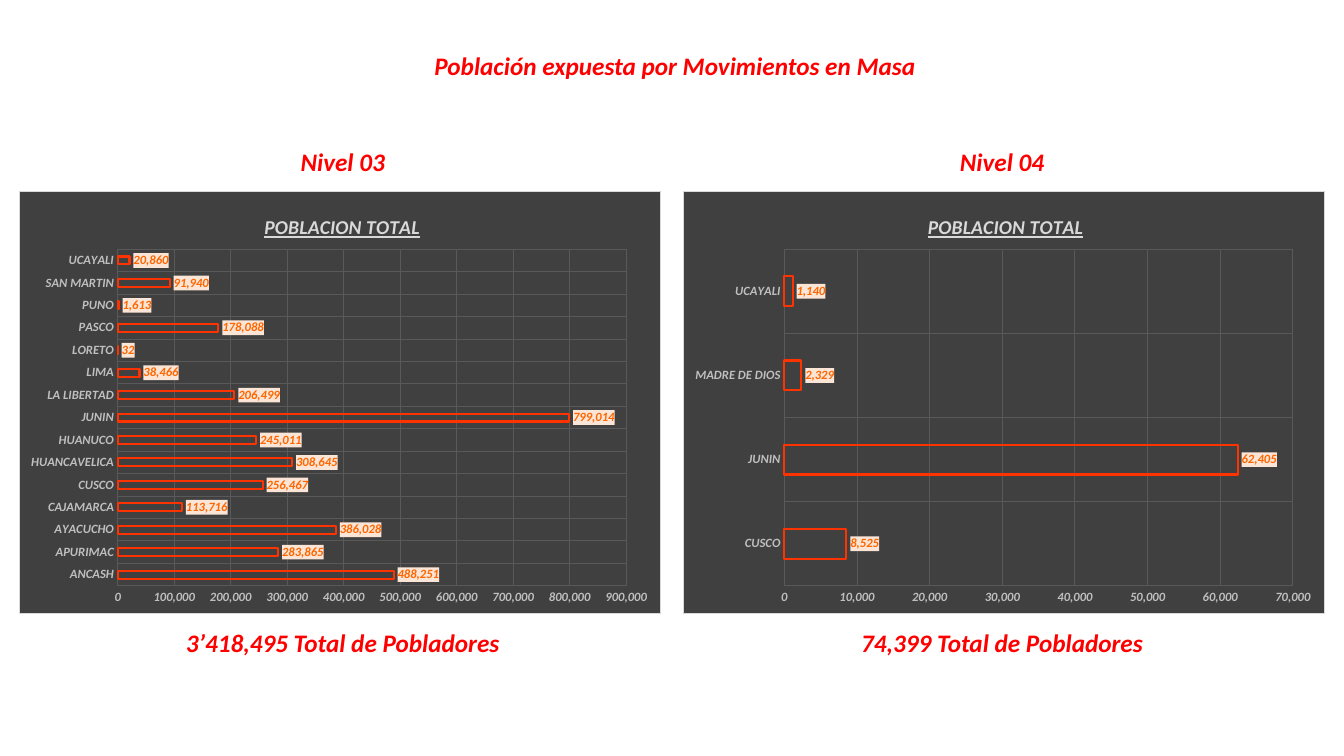
from lxml.etree import fromstring
from pptx import Presentation
from pptx.chart.data import CategoryChartData
from pptx.dml.color import RGBColor
from pptx.enum.chart import XL_CHART_TYPE, XL_LABEL_POSITION, XL_TICK_MARK
from pptx.enum.text import MSO_AUTO_SIZE, PP_ALIGN
from pptx.oxml.ns import nsdecls, qn
from pptx.util import Inches, Pt

HEADINGS = [
    # text, left, top, width, wraps
    ("Población expuesta por Movimientos en Masa", 4.18, 0.45, 5.03, False),
    ("Nivel 03", 2.85, 1.4, 1.1, True),
    ("Nivel 04", 9.39, 1.4, 1.1, True),
    ("3’418,495 Total de Pobladores", 1.73, 6.17, 3.34, True),
    ("74,399 Total de Pobladores", 8.26, 6.17, 3.36, True),
]
CHART_TITLE = "POBLACION TOTAL"
LEVEL_3 = {
    "ANCASH": 488251, "APURIMAC": 283865, "AYACUCHO": 386028,
    "CAJAMARCA": 113716, "CUSCO": 256467, "HUANCAVELICA": 308645,
    "HUANUCO": 245011, "JUNIN": 799014, "LA LIBERTAD": 206499,
    "LIMA": 38466, "LORETO": 32, "PASCO": 178088, "PUNO": 1613,
    "SAN MARTIN": 91940, "UCAYALI": 20860,
}
LEVEL_4 = {"CUSCO": 8525, "JUNIN": 62405, "MADRE DE DIOS": 2329, "UCAYALI": 1140}
CHARTS = [
    # population, left, axis maximum, axis step, plot left as a share of the chart
    (LEVEL_3, 0.19, 900000, 100000, 0.153),
    (LEVEL_4, 6.77, 70000, 10000, 0.158),
]
CHART_TOP, CHART_WIDTH, CHART_HEIGHT = 1.89, 6.37, 4.2

HEADING_FONT = {"name": "Calibri", "size": Pt(18), "bold": True, "italic": True}
TITLE_FONT = {**HEADING_FONT, "size": Pt(14), "underline": True}
SMALL_FONT = {**HEADING_FONT, "size": Pt(9)}


def color(hex_text):
    return RGBColor.from_string(hex_text)


def set_font(font, values, hex_text):
    for name, value in values.items():
        setattr(font, name, value)
    font.color.rgb = color(hex_text)


def shape_properties(fill, border=None):
    """Return a c:spPr element with a solid fill and an optional thin border."""
    solid = '<a:solidFill><a:srgbClr val="{}"/></a:solidFill>'
    line = f'<a:ln w="9525">{solid.format(border)}</a:ln>' if border else ""
    return fromstring(f'<c:spPr {nsdecls("c", "a")}>{solid.format(fill)}{line}</c:spPr>')


def manual_layout(x, y, width=None, height=None):
    """Return a c:layout element, in shares of the chart's size."""
    parts = {"xMode": "edge", "yMode": "edge", "x": x, "y": y}
    if width:
        parts = {"layoutTarget": "inner", **parts, "w": width, "h": height}
    inner = "".join(f'<c:{name} val="{value}"/>' for name, value in parts.items())
    return fromstring(f'<c:layout {nsdecls("c")}>'
                      f'<c:manualLayout>{inner}</c:manualLayout></c:layout>')


def set_layout(parent, index, layout):
    for old in parent.findall(qn("c:layout")):
        parent.remove(old)
    parent.insert(index, layout)


def add_heading(slide, text, left, top, width, wraps):
    box = slide.shapes.add_textbox(Inches(left), Inches(top), Inches(width), Inches(0.4))
    box.text_frame.word_wrap = wraps
    box.text_frame.auto_size = MSO_AUTO_SIZE.SHAPE_TO_FIT_TEXT
    paragraph = box.text_frame.paragraphs[0]
    paragraph.alignment = PP_ALIGN.CENTER
    run = paragraph.add_run()
    run.text = text
    set_font(run.font, HEADING_FONT, "FF0000")


def format_axis(axis):
    axis.major_tick_mark = axis.minor_tick_mark = XL_TICK_MARK.NONE
    axis.format.line.fill.background()
    axis.has_major_gridlines = True
    grid = axis.major_gridlines.format.line
    grid.width = Pt(0.75)
    grid.color.rgb = color("595959")
    set_font(axis.tick_labels.font, SMALL_FONT, "BFBFBF")


def format_bars(plot):
    plot.gap_width, plot.overlap = 182, -50
    plot.vary_by_categories = False
    bars = plot.series[0].format
    bars.fill.background()
    bars.line.width = Pt(1.5)
    bars.line.color.rgb = color("FF3300")
    plot.has_data_labels = True
    labels = plot.data_labels
    labels.show_value = True
    labels.position = XL_LABEL_POSITION.OUTSIDE_END
    labels.number_format = "#,##0"
    labels.number_format_is_linked = False
    set_font(labels.font, SMALL_FONT, "FF6600")
    text_properties = labels._element.find(qn("c:txPr"))
    text_properties.addprevious(shape_properties("FBE5D6"))


def add_population_chart(slide, population, left, maximum, step, plot_left):
    data = CategoryChartData(number_format="#,##0")
    data.categories = list(population)
    data.add_series("Series 1", list(population.values()))
    chart = slide.shapes.add_chart(
        XL_CHART_TYPE.BAR_CLUSTERED, Inches(left), Inches(CHART_TOP),
        Inches(CHART_WIDTH), Inches(CHART_HEIGHT), data).chart
    chart.has_legend = False
    set_font(chart.font, {"name": "Calibri", "size": Pt(10)}, "000000")

    chart.has_title = True
    paragraph = chart.chart_title.text_frame.paragraphs[0]
    run = paragraph.add_run()
    run.text = CHART_TITLE
    set_font(run.font, TITLE_FONT, "D9D9D9")
    set_layout(chart.chart_title._element, 1, manual_layout(0.376, 0.045))

    for axis in (chart.category_axis, chart.value_axis):
        format_axis(axis)
    chart.value_axis.minimum_scale = 0
    chart.value_axis.maximum_scale = maximum
    chart.value_axis.major_unit = step
    chart.value_axis.tick_labels.number_format = "#,##0"
    chart.value_axis.tick_labels.number_format_is_linked = False
    format_bars(chart.plots[0])

    chart_element = chart._chartSpace.find(qn("c:chart"))
    chart_element.addnext(shape_properties("404040", "D9D9D9"))
    set_layout(chart_element.find(qn("c:plotArea")), 0,
               manual_layout(plot_left, 0.138, 0.793, 0.797))


def main():
    presentation = Presentation()
    presentation.slide_width, presentation.slide_height = Inches(13.33), Inches(7.5)
    slide = presentation.slides.add_slide(presentation.slide_layouts[6])
    for heading in HEADINGS:
        add_heading(slide, *heading)
    for chart in CHARTS:
        add_population_chart(slide, *chart)
    presentation.save("out.pptx")


if __name__ == "__main__":
    main()
